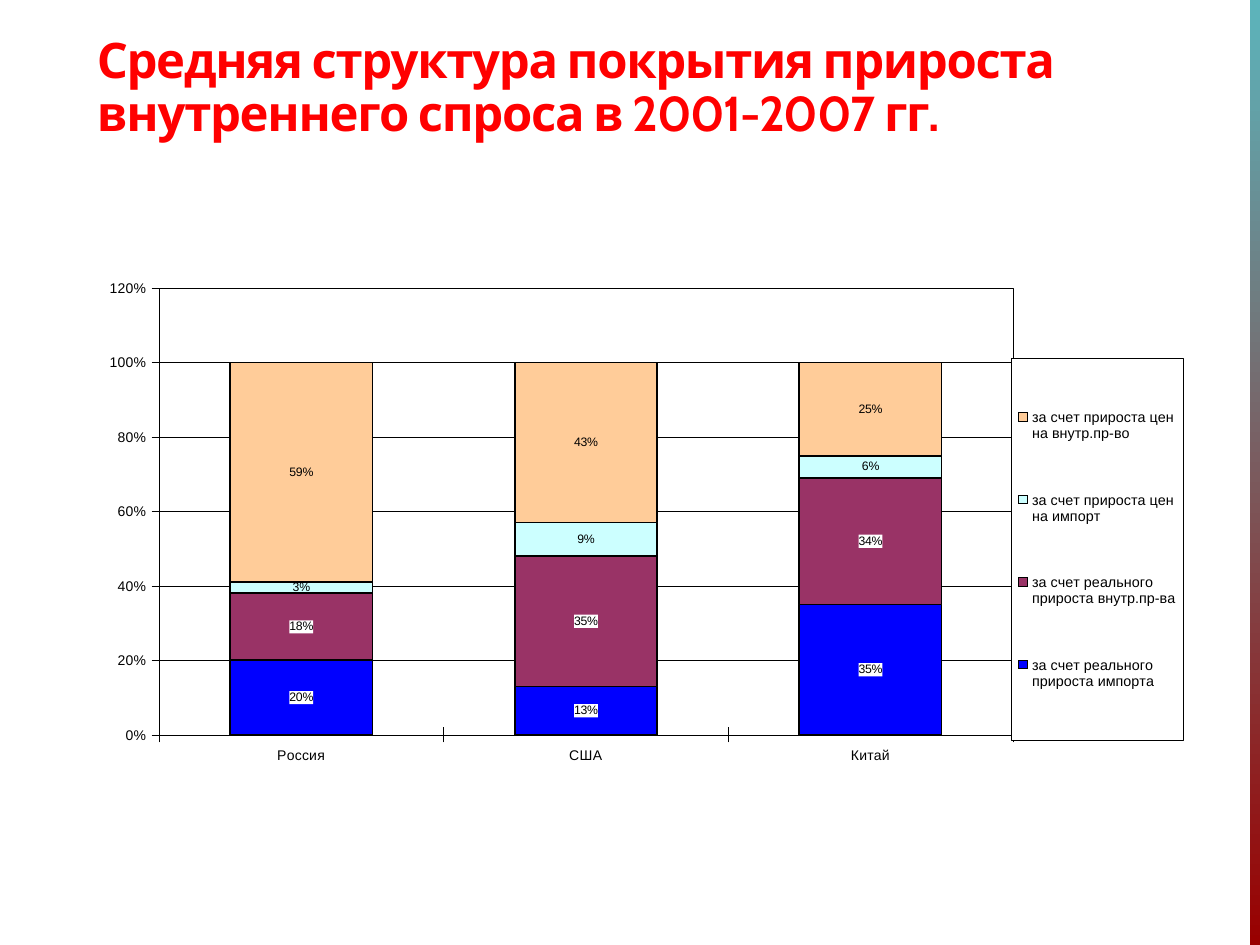
"""Build a slide with a stacked column chart of domestic demand growth coverage."""
from dataclasses import dataclass

from pptx import Presentation
from pptx.chart.data import CategoryChartData
from pptx.dml.color import RGBColor
from pptx.enum.chart import XL_CHART_TYPE, XL_LEGEND_POSITION, XL_TICK_MARK
from pptx.enum.shapes import MSO_SHAPE
from pptx.enum.text import MSO_ANCHOR
from pptx.oxml import parse_xml
from pptx.oxml.ns import nsdecls, qn
from pptx.util import Inches, Pt

STACKED = XL_CHART_TYPE.COLUMN_STACKED
RECTANGLE = MSO_SHAPE.RECTANGLE
MIDDLE = MSO_ANCHOR.MIDDLE
RIGHT = XL_LEGEND_POSITION.RIGHT
CROSS, OUTSIDE, NONE = XL_TICK_MARK.CROSS, XL_TICK_MARK.OUTSIDE, XL_TICK_MARK.NONE


@dataclass(frozen=True)
class Theme:
    title_font: str = "Cabin"
    chart_font: str = "Arial"
    title: str = "FF0000"
    ink: str = "000000"
    paper: str = "FFFFFF"
    stripe: tuple = ("5CB5BC", "990000")
    title_size: float = 28
    axis_size: float = 8
    legend_size: float = 8.2
    label_size: float = 7
    hairline: float = 0.25
    outline: float = 1


def manual_layout(x, y, w, h, target=""):
    modes = '<c:xMode val="edge"/><c:yMode val="edge"/>'
    sizes = "".join(f'<c:{k} val="{v}"/>' for k, v in zip("xywh", (x, y, w, h)))
    return parse_xml(f'<c:layout {nsdecls("c")}><c:manualLayout>{target}{modes}{sizes}'
                     "</c:manualLayout></c:layout>")


def box_style(fill, line=None):
    edge = (f'<a:ln w="{Pt(theme.hairline)}"><a:solidFill><a:srgbClr val="{line}"/></a:solidFill></a:ln>'
            if line else "")
    return parse_xml(f'<c:spPr {nsdecls("c", "a")}><a:solidFill><a:srgbClr val="{fill}"/>'
                     f"</a:solidFill>{edge}</c:spPr>")


theme = Theme()
ink = RGBColor.from_string(theme.ink)
SERIES = [
    ("за счет реального прироста импорта", (0.20, 0.13, 0.35), "0000FF", True),
    ("за счет реального прироста внутр.пр-ва", (0.18, 0.35, 0.34), "993366", True),
    ("за счет прироста цен на импорт", (0.03, 0.09, 0.06), "CCFFFF", False),
    ("за счет прироста цен на внутр.пр-во", (0.59, 0.43, 0.25), "FFCC99", False),
]

prs = Presentation()
prs.slide_width, prs.slide_height = Inches(10), Inches(7.5)
W, H = prs.slide_width, prs.slide_height
s = prs.slides.add_slide(prs.slide_layouts[6])

stripe_width = int(W * 0.008)
sp = s.shapes.add_shape(RECTANGLE, W - stripe_width, 0, stripe_width, H)
sp.shadow.inherit = False
sp.line.fill.background()
sp.fill.gradient()
sp.fill.gradient_angle = 270
for stop, position, color in zip(sp.fill.gradient_stops, (0, 1), theme.stripe):
    stop.position = position
    stop.color.rgb = RGBColor.from_string(color)

title = s.shapes.add_textbox(Inches(0.67), Inches(0.16), Inches(8.75), Inches(1.09))
tf = title.text_frame
tf.word_wrap = True
tf.vertical_anchor = MIDDLE
p = tf.paragraphs[0]
p.line_spacing = 0.9
p.font.name, p.font.size, p.font.bold = theme.title_font, Pt(theme.title_size), True
p.font.color.rgb = RGBColor.from_string(theme.title)
r = p.add_run()
r.text = "Средняя структура покрытия прироста внутреннего спроса в 2001-2007 гг."
r._r.get_or_add_rPr().set("spc", "-70")

data = CategoryChartData(number_format="0%")
data.categories = ["Россия", "США", "Китай"]
for name, values, _, _ in SERIES:
    data.add_series(name, values)
chart = s.shapes.add_chart(STACKED, Inches(0.51), Inches(2.07), Inches(9.06), Inches(4.09), data).chart
chart.has_title = False
chart.has_legend = True
legend = chart.legend
legend.position = RIGHT
legend.include_in_layout = False

cat_axis, val_axis = chart.category_axis, chart.value_axis
cat_axis.major_tick_mark = CROSS
val_axis.major_tick_mark = OUTSIDE
val_axis.minimum_scale, val_axis.maximum_scale, val_axis.major_unit = 0, 1.2, 0.2
val_axis.has_major_gridlines = True
val_axis.tick_labels.number_format = "0%"
val_axis.tick_labels.number_format_is_linked = False
for axis in (cat_axis, val_axis):
    axis.minor_tick_mark = NONE
for line in (cat_axis.format.line, val_axis.format.line, val_axis.major_gridlines.format.line):
    line.color.rgb = ink
    line.width = Pt(theme.hairline)

plot = chart.plots[0]
plot.gap_width, plot.overlap, plot.vary_by_categories = 100, 100, False
fonts = [(chart.font, theme.axis_size), (cat_axis.tick_labels.font, theme.axis_size),
         (val_axis.tick_labels.font, theme.axis_size), (legend.font, theme.legend_size)]
for series, (_, _, color, boxed) in zip(plot.series, SERIES):
    series.format.fill.solid()
    series.format.fill.fore_color.rgb = RGBColor.from_string(color)
    series.format.line.color.rgb = ink
    series.format.line.width = Pt(theme.outline)
    labels = series.data_labels
    labels.show_value = True
    labels.number_format = "0%"
    labels.number_format_is_linked = False
    fonts.append((labels.font, theme.label_size))
    if boxed:
        labels._element.find(qn("c:txPr")).addprevious(box_style(theme.paper))
for font, size in fonts:
    font.name, font.size = theme.chart_font, Pt(size)
    font.color.rgb = ink

area = chart._chartSpace.chart.plotArea
box = legend._element
for parent in (area, box):
    for old in parent.findall(qn("c:layout")):
        parent.remove(old)
area.insert(0, manual_layout(0.083, 0.053, 0.748, 0.867, '<c:layoutTarget val="inner"/>'))
area.append(box_style(theme.paper, theme.ink))
box.find(qn("c:legendPos")).addnext(manual_layout(0.83, 0.19, 0.15, 0.74))
box.find(qn("c:txPr")).addprevious(box_style(theme.paper, theme.ink))

prs.save("out.pptx")
